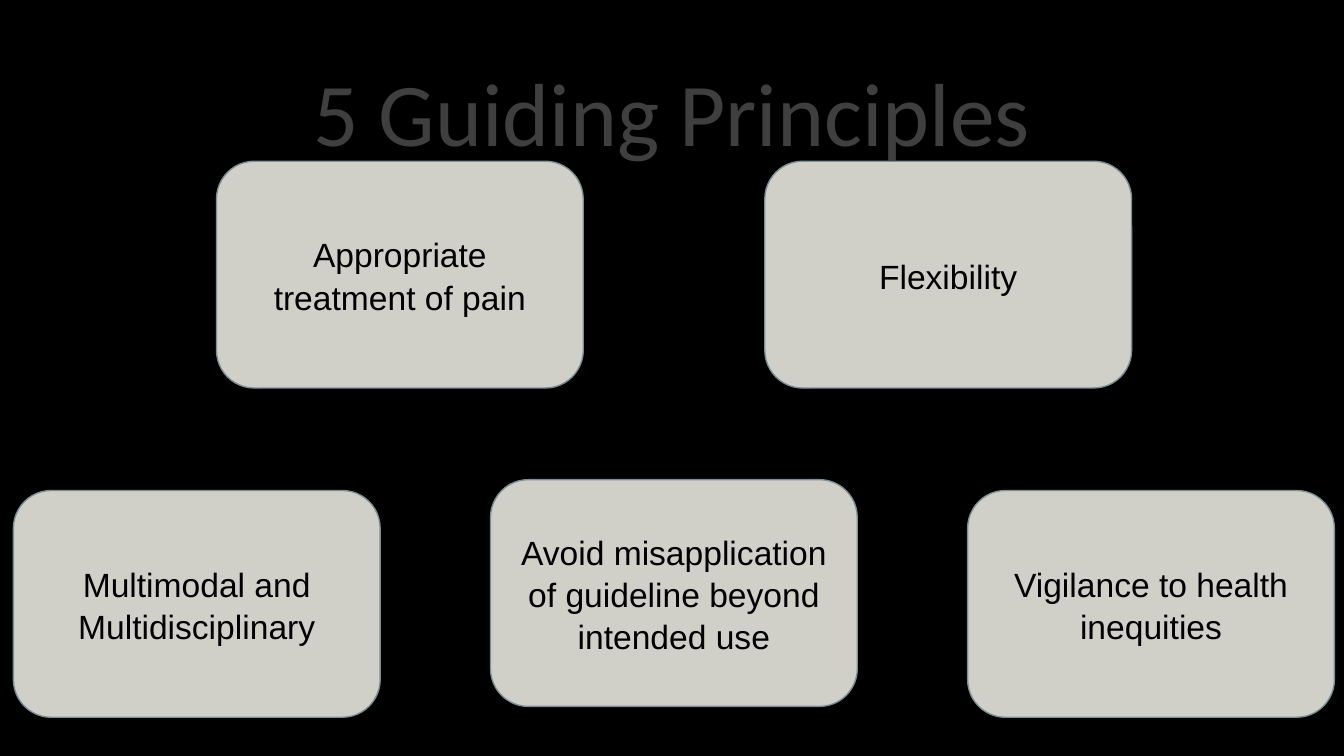
from dataclasses import dataclass

from pptx import Presentation
from pptx.dml.color import RGBColor
from pptx.enum import shapes, text
from pptx.util import Pt

BLACK = RGBColor(0x00, 0x00, 0x00)
CHARCOAL = RGBColor(0x3F, 0x3F, 0x3F)
STONE = RGBColor(0xD1, 0xD0, 0xC8)
SLATE = RGBColor(0x7C, 0x8F, 0x97)

CARD_WIDTH, CARD_HEIGHT = 196.5, 121.5
INSET = Pt(7.2)
TOP_ROW, BOTTOM_ROW, MIDDLE_TOP = 86.4, 262.8, 257
TOP_LEFT, TOP_STEP = 116, 293.75
BOTTOM_LEFT, BOTTOM_STEP = 7.2, 255.6

FRAME_FORMAT = {
    "word_wrap": True,
    "vertical_anchor": text.MSO_ANCHOR.MIDDLE,
    "margin_left": INSET,
    "margin_top": INSET,
    "margin_right": INSET,
    "margin_bottom": INSET,
}
PARA_FORMAT = {"alignment": text.PP_ALIGN.CENTER, "line_spacing": 1.05}


@dataclass(frozen=True)
class Principle:
    label: str
    left: float
    top: float


PRINCIPLES = [
    Principle("Appropriate treatment of pain", TOP_LEFT, TOP_ROW),
    Principle("Flexibility", TOP_LEFT + TOP_STEP, TOP_ROW),
    Principle("Multimodal and Multidisciplinary", BOTTOM_LEFT, BOTTOM_ROW),
    Principle("Avoid misapplication of guideline beyond intended use",
              BOTTOM_LEFT + BOTTOM_STEP, MIDDLE_TOP),
    Principle("Vigilance to health inequities",
              BOTTOM_LEFT + 2 * BOTTOM_STEP, BOTTOM_ROW),
]


def apply_format(target, values: dict) -> None:
    for name, value in values.items():
        setattr(target, name, value)


def write_centred(box, words: str, font: str, size: float, color: RGBColor) -> None:
    frame = box.text_frame
    apply_format(frame, FRAME_FORMAT)
    para = frame.paragraphs[0]
    apply_format(para, PARA_FORMAT)
    span = para.add_run()
    span.text = words
    apply_format(span.font, {"name": font, "size": Pt(size)})
    span.font.color.rgb = color


def add_title(page, words: str) -> None:
    box = page.shapes.add_textbox(Pt(24.5), Pt(35.3), Pt(671), Pt(45.4))
    write_centred(box, words, "Calibri", 48, CHARCOAL)


def add_card(page, principle: Principle) -> None:
    card = page.shapes.add_shape(
        shapes.MSO_SHAPE.ROUNDED_RECTANGLE,
        Pt(principle.left), Pt(principle.top), Pt(CARD_WIDTH), Pt(CARD_HEIGHT))
    card.shadow.inherit = False
    card.fill.solid()
    card.fill.fore_color.rgb = STONE
    card.line.color.rgb = SLATE
    card.line.width = Pt(0.75)
    write_centred(card, principle.label, "Arial", 18, BLACK)


def main() -> None:
    deck = Presentation()
    apply_format(deck, {"slide_width": Pt(720), "slide_height": Pt(405)})
    page = deck.slides.add_slide(deck.slide_layouts[6])
    page.background.fill.solid()
    page.background.fill.fore_color.rgb = BLACK
    add_title(page, "5 Guiding Principles")
    for principle in PRINCIPLES:
        add_card(page, principle)
    deck.save("out.pptx")


if __name__ == "__main__":
    main()
